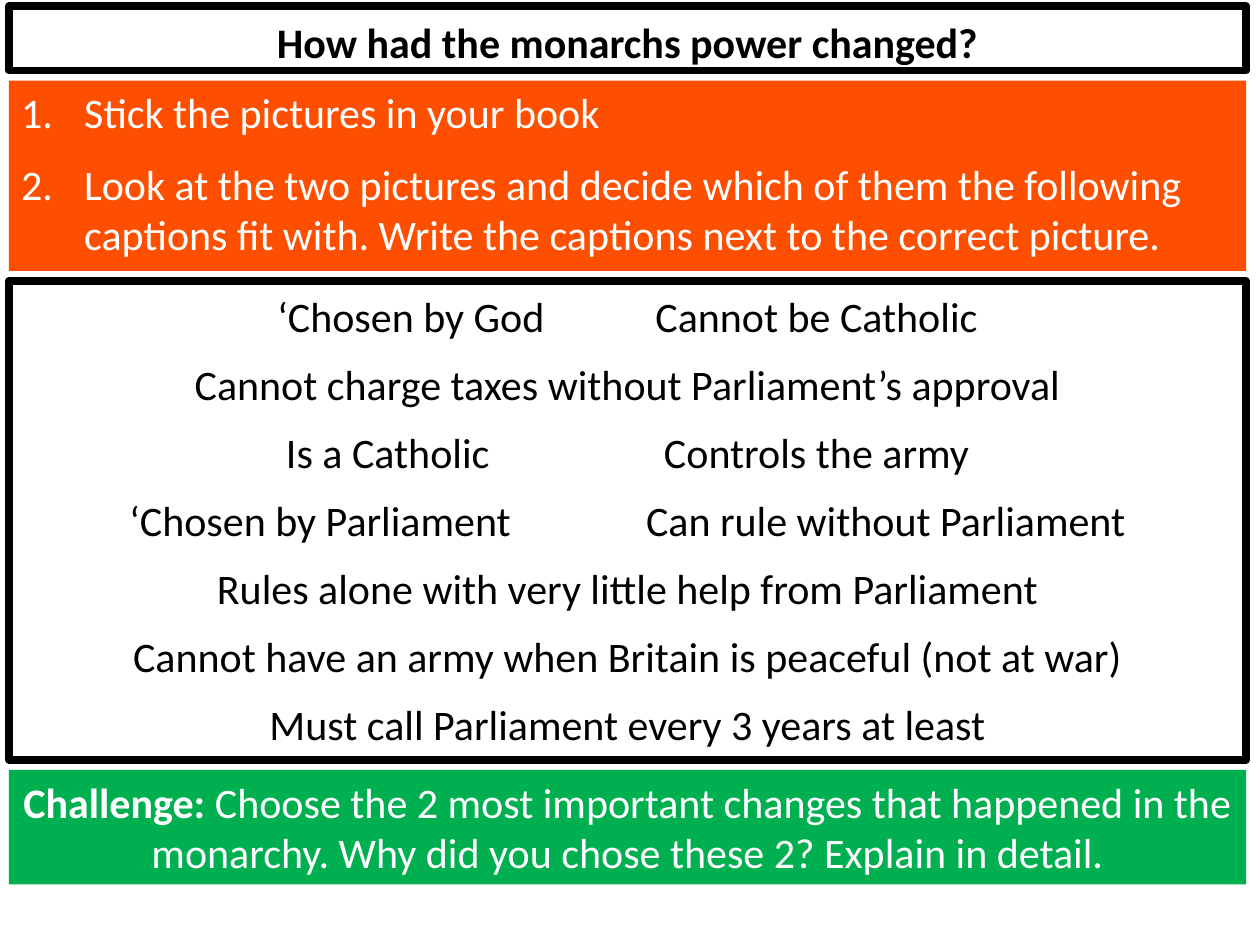
"""Build a lesson slide about how the power of the monarchy changed."""
from dataclasses import dataclass

from lxml.etree import SubElement
from pptx import Presentation
from pptx.dml.color import RGBColor
from pptx.enum.shapes import MSO_SHAPE as Shape
from pptx.enum.text import MSO_ANCHOR as Anchor, MSO_AUTO_SIZE as AutoSize, PP_ALIGN as Align
from pptx.oxml.ns import qn
from pptx.util import Inches, Pt


@dataclass(frozen=True)
class Theme:
    font: str = "Calibri"
    size: float = 24
    border: float = 4.5
    dark: str = "000000"
    light: str = "FFFFFF"
    task: str = "FE4F00"
    challenge: str = "00B050"


THEME = Theme()
WIDTH, HEIGHT = 10, 7.5
LEFT, TOP, PANEL_WIDTH, GAP = 0.07, 0.05, 9.82, 0.08
LIST_INDENT = 0.5

TITLE = [[("How had the monarchs power changed?", True)]]
TASKS = [
    [("Stick the pictures in your book", False)],
    [("Look at the two pictures and decide which of them the following captions fit with. "
      "Write the captions next to the correct picture.", False)],
]
CAPTIONS = [
    ("‘Chosen by God\tCannot be Catholic", 3),
    ("Cannot charge taxes without Parliament’s approval", None),
    ("Is a Catholic \tControls the army", 3),
    ("‘Chosen by Parliament\tCan rule without Parliament", 4.1),
    ("Rules alone with very little help from Parliament", None),
    ("Cannot have an army when Britain is peaceful (not at war)", None),
    ("Must call Parliament every 3 years at least", None),
]
CHALLENGE = [[
    ("Challenge: ", True),
    ("Choose the 2 most important changes that happened in the monarchy. "
     "Why did you chose these 2? Explain in detail.", False),
]]
CAPTION_LINES = [[(text, False)] for text, _ in CAPTIONS]

PANELS = [
    ("title", TITLE, 0.51, None),
    ("tasks", TASKS, 1.51, THEME.task),
    ("captions", CAPTION_LINES, 3.8, None),
    ("challenge", CHALLENGE, 0.91, THEME.challenge),
]


def color(value):
    return RGBColor.from_string(value)


def style_panel(shape, fill):
    if fill:
        shape.fill.solid()
        shape.fill.fore_color.rgb = color(fill)
        shape.line.fill.background()
    else:
        shape.fill.background()
        shape.line.color.rgb = color(THEME.dark)
        shape.line.width = Pt(THEME.border)


def write_text(shape, lines, fill):
    frame = shape.text_frame
    frame.word_wrap = True
    frame.auto_size = AutoSize.NONE
    frame.vertical_anchor = Anchor.TOP
    for index, runs in enumerate(lines):
        paragraph = frame.add_paragraph() if index else frame.paragraphs[0]
        paragraph.alignment = Align.CENTER
        if not fill:
            paragraph.line_spacing = 1.07
            paragraph.space_after = Pt(8)
        for text, bold in runs:
            run = paragraph.add_run()
            run.text = text
            run.font.name = THEME.font
            run.font.size = Pt(THEME.size)
            run.font.bold = bold
            run.font.color.rgb = color(THEME.light if fill else THEME.dark)


def number_paragraphs(paragraphs):
    for index, paragraph in enumerate(paragraphs):
        paragraph.alignment = Align.LEFT
        paragraph.space_before = Pt(THEME.size / 2 if index else 0)
        properties = paragraph._p.get_or_add_pPr()
        properties.set("marL", str(Inches(LIST_INDENT)))
        properties.set("indent", str(-Inches(LIST_INDENT)))
        SubElement(properties, qn("a:buFont"), typeface="+mj-lt")
        SubElement(properties, qn("a:buAutoNum"), type="arabicPeriod")


def set_tab_stops(paragraphs):
    for paragraph, (_, stop) in zip(paragraphs, CAPTIONS):
        if stop:
            tabs = SubElement(paragraph._p.get_or_add_pPr(), qn("a:tabLst"))
            SubElement(tabs, qn("a:tab"), pos=str(Inches(stop)), algn="l")


def main():
    presentation = Presentation()
    presentation.slide_width, presentation.slide_height = Inches(WIDTH), Inches(HEIGHT)
    slide = presentation.slides.add_slide(presentation.slide_layouts[5])
    finish = {"tasks": number_paragraphs, "captions": set_tab_stops}
    top = TOP
    for name, lines, height, fill in PANELS:
        box = [Inches(length) for length in (LEFT, top, PANEL_WIDTH, height)]
        if name == "title":
            shape = slide.shapes.title
            shape.left, shape.top, shape.width, shape.height = box
        else:
            shape = slide.shapes.add_shape(Shape.RECTANGLE, *box)
            shape.shadow.inherit = False
        style_panel(shape, fill)
        write_text(shape, lines, fill)
        if name in finish:
            finish[name](shape.text_frame.paragraphs)
        top += height + GAP
    presentation.save("out.pptx")


if __name__ == "__main__":
    main()
